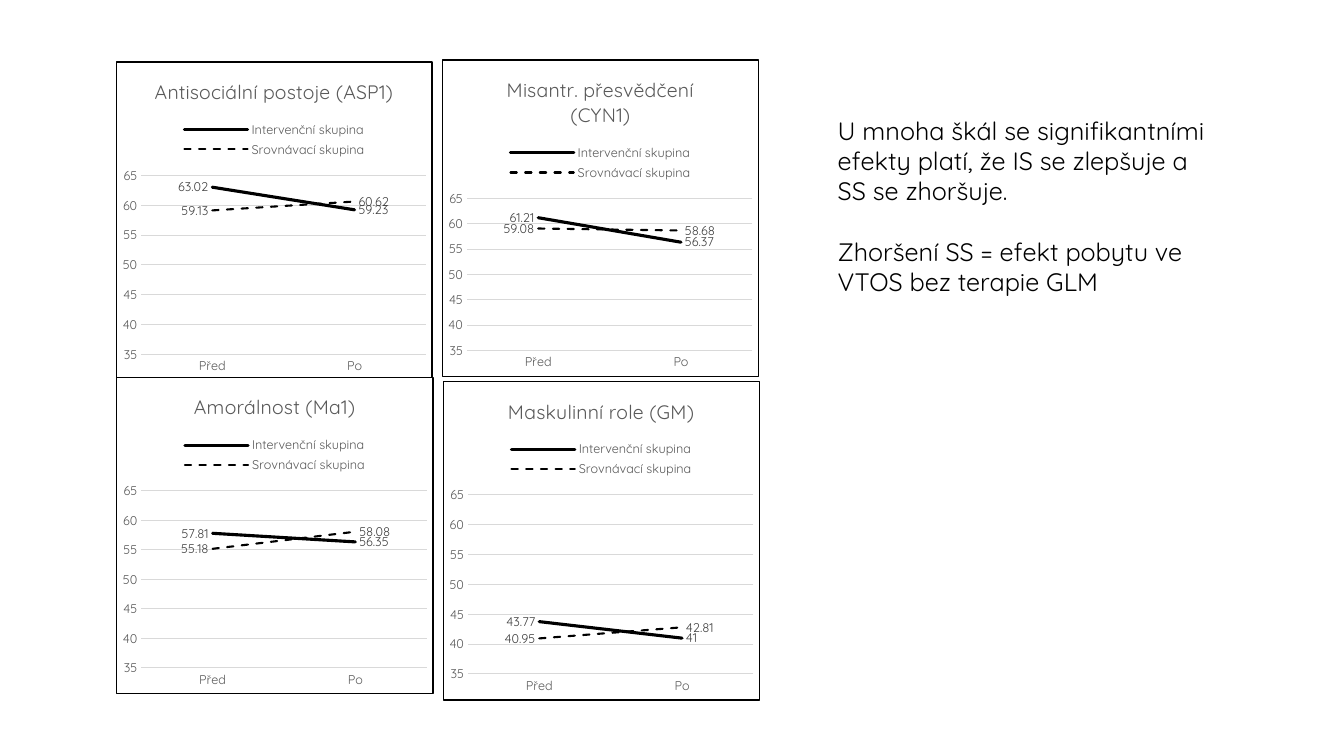
from lxml import etree
from pptx import Presentation
from pptx.chart.data import CategoryChartData
from pptx.dml.color import RGBColor
from pptx.enum.chart import XL_CHART_TYPE, XL_LABEL_POSITION, XL_LEGEND_POSITION, XL_MARKER_STYLE, XL_TICK_MARK
from pptx.enum.dml import MSO_LINE
from pptx.oxml import parse_xml
from pptx.oxml.ns import nsdecls, qn
from pptx.util import Emu, Pt

LINE = XL_CHART_TYPE.LINE
LEFT, RIGHT = XL_LABEL_POSITION.LEFT, XL_LABEL_POSITION.RIGHT
TOP = XL_LEGEND_POSITION.TOP
NO_MARKER = XL_MARKER_STYLE.NONE
NO_TICK = XL_TICK_MARK.NONE
SOLID, DASH = MSO_LINE.SOLID, MSO_LINE.DASH
BLANK_LAYOUT = 6

# left, top, width, height, title, intervention values, comparison values
CHARTS = [
    (115, 61, 314, 317, "Antisociální postoje (ASP1)", (63.02, 59.23), (59.13, 60.62)),
    (438, 59, 315, 315, "Misantr. přesvědčení (CYN1)", (61.21, 56.37), (59.08, 58.68)),
    (439, 378, 315, 317, "Maskulinní role (GM)", (43.77, 41), (40.95, 42.81)),
    (115, 374, 315, 315, "Amorálnost (Ma1)", (57.81, 56.35), (55.18, 58.08)),
]
COMMENTS = [
    "U mnoha škál se signifikantními efekty platí, že IS se zlepšuje a SS se zhoršuje.",
    "Zhoršení SS = efekt pobytu ve VTOS bez terapie GLM",
]


def px(length):
    return Emu(length * 9144)


def color(value):
    return RGBColor.from_string(value)


class SlideBuilder:
    font_name = "Quicksand"
    black, gray, label_gray, grid_gray = "000000", "595959", "404040", "D9D9D9"

    def __init__(self, presentation):
        self.slide = presentation.slides.add_slide(presentation.slide_layouts[BLANK_LAYOUT])

    def style_font(self, font, size, font_color):
        font.name = self.font_name
        font.size = Pt(size)
        font.bold = False
        font.color.rgb = color(font_color)

    def style_line(self, line, width, line_color, dash=SOLID):
        line.color.rgb = color(line_color)
        line.width = Pt(width)
        line.dash_style = dash

    def text(self, left, top, width, height, paragraphs, size, gap):
        box = self.slide.shapes.add_textbox(px(left), px(top), px(width), px(height))
        text_frame = box.text_frame
        text_frame.word_wrap = True
        text_frame.text = "\n".join(paragraphs)
        for paragraph in text_frame.paragraphs:
            self.style_font(paragraph.runs[0].font, size, self.black)
        for paragraph in text_frame.paragraphs[1:]:
            paragraph.space_before = Pt(gap)

    def line_chart(self, left, top, width, height, title, intervention, comparison):
        data = CategoryChartData()
        data.categories = ["Před", "Po"]
        data.add_series("Intervenční skupina", intervention)
        data.add_series("Srovnávací skupina", comparison)
        chart = self.slide.shapes.add_chart(
            LINE, px(left), px(top), px(width), px(height), data).chart
        self.style_font(chart.font, 10, self.black)

        # Title and legend
        chart.has_title = True
        chart.chart_title.text_frame.text = title
        run = chart.chart_title.text_frame.paragraphs[0].runs[0]
        self.style_font(run.font, 14, self.gray)
        chart.has_legend = True
        chart.legend.position = TOP
        chart.legend.include_in_layout = False
        self.style_font(chart.legend.font, 9, self.gray)

        self.axes(chart)
        for series, line_width, dash in zip(chart.plots[0].series, (2.25, 1.5), (SOLID, DASH)):
            self.series(series, line_width, dash)
        self.frame(chart)

    def axes(self, chart):
        for axis in (chart.category_axis, chart.value_axis):
            axis.major_tick_mark = NO_TICK
            axis.minor_tick_mark = NO_TICK
            self.style_font(axis.tick_labels.font, 9, self.gray)
        self.style_line(chart.category_axis.format.line, 0.75, self.grid_gray)
        values = chart.value_axis
        values.minimum_scale, values.maximum_scale, values.major_unit = 35, 65, 5
        values.format.line.fill.background()
        values.has_major_gridlines = True
        self.style_line(values.major_gridlines.format.line, 0.75, self.grid_gray)

    def series(self, series, line_width, dash):
        series.smooth = False
        series.marker.style = NO_MARKER
        self.style_line(series.format.line, line_width, self.black, dash)
        labels = series.data_labels
        labels.show_value = True
        labels.position = RIGHT
        self.style_font(labels.font, 9, self.label_gray)
        first_label = series.points[0].data_label
        self.style_font(first_label.font, 9, self.label_gray)
        first_label.position = LEFT

    def frame(self, chart):
        # Rounded series ends
        for series in chart.element.iter(qn("c:ser")):
            series.find(qn("c:spPr")).find(qn("a:ln")).set("cap", "rnd")
        # White area with a thin border
        area = parse_xml(f"<c:spPr {nsdecls('c', 'a')}/>")
        border = etree.Element(qn("a:ln"), w=str(Pt(0.75)))
        for parent, fill in ((area, "FFFFFF"), (border, self.black)):
            solid = etree.SubElement(parent, qn("a:solidFill"))
            etree.SubElement(solid, qn("a:srgbClr"), val=fill)
        area.append(border)
        chart.element.find(qn("c:chart")).addnext(area)


def main():
    presentation = Presentation()
    presentation.slide_width, presentation.slide_height = px(1333), px(750)
    builder = SlideBuilder(presentation)

    # Four scales before and after
    for chart in CHARTS:
        builder.line_chart(*chart)

    # Commentary
    builder.text(821, 109, 386, 192, COMMENTS, size=18, gap=22)

    presentation.save("out.pptx")


if __name__ == "__main__":
    main()
